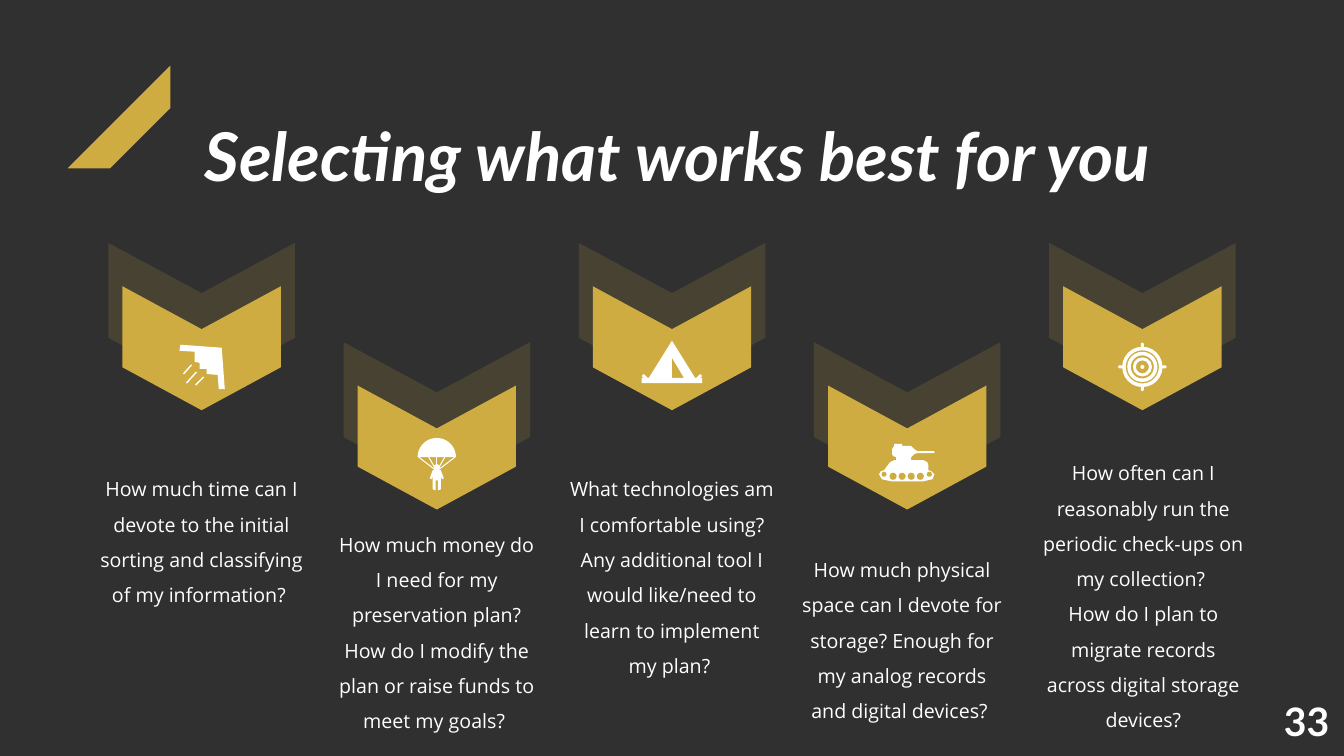
from math import cos, pi, sin

from lxml.etree import SubElement
from pptx import Presentation
from pptx.dml.color import RGBColor
from pptx.enum.shapes import MSO_CONNECTOR, MSO_SHAPE
from pptx.enum.text import MSO_ANCHOR, PP_ALIGN
from pptx.oxml.ns import qn
from pptx.util import Inches, Pt

DARK = RGBColor(0x30, 0x30, 0x30)
GOLD = RGBColor(0xCE, 0xAC, 0x41)
WHITE = RGBColor(0xFF, 0xFF, 0xFF)

# Five columns, alternating between an upper and a lower row
WIDTH, HEIGHT = 13.33, 7.5
FIRST_COLUMN, COLUMN = 0.15 * WIDTH, 0.175 * WIDTH
UPPER_ROW, ROW_STEP = 3.13, 0.985
BADGE_DROP, ICON_DROP = 0.325, 0.51
TEXT_WIDTH = 2.23

# Question paragraphs, text top, text height, sideways shift of the text
QUESTIONS = [
    (["How much time can I devote to the initial sorting and classifying of my information? "],
     4.57, 1.48, 0),
    (["How much money do I need for my preservation plan? How do I modify the plan or raise "
      "funds to meet my goals? "], 5.12, 2.18, 0),
    (["What technologies am I comfortable using? Any additional tool I would like/need to "
      "learn to implement my plan? "], 4.57, 2.18, 0),
    (["How much physical space can I devote for storage? Enough for my analog records and "
      "digital devices? "], 5.37, 1.83, -0.05),
    (["How often can I reasonably run the periodic check-ups on my collection? ",
      "How do I plan to migrate records across digital storage devices?"], 4.41, 2.89, 0.01),
]

# Icon outlines, in hundredths of an inch from the icon's centre
PLANE = [(20, -19), (-21, -22), (-22, -16), (-7, -15), (-7, -5), (-2, -4), (-2, 2),
         (5, 2), (5, 7), (16, 8), (17, 22), (23, 22)]
BOMBS = [((-15, 16), (-5, 5)), ((-6, 18), (2, 10)), ((-18, 7), (-10, -2))]
JUMPER = [(7, 12), (4, 4), (-4, 4), (-7, 12), (-5, 13), (-4, 9), (-4, 23), (-1, 24),
          (-1, 14), (1, 14), (1, 24), (4, 23), (4, 9), (5, 13)]
TENT = [(-24, 11), (-28, 7), (-30, 9), (-28, 11), (-30, 11), (-30, 16), (30, 16), (30, 11),
        (28, 11), (30, 9), (28, 7), (24, 11), (23, 11), (0, -26), (-23, 11)]
TENT_DOOR = [(0, 11), (0, -9), (12, 11)]
TANK = [(-23, 4), (-17, -4), (-13, -6), (-11, -6), (-11, -9), (-14, -10), (-15, -12),
        (-15, -17), (-13, -20), (-13, -22), (-5, -22), (-5, -20), (4, -20), (7, -17),
        (10, -15), (27, -15), (27, -13), (10, -13), (7, -12), (4, -9), (4, -6), (16, -6),
        (20, -4), (21, -1), (21, 4), (24, 5), (27, 8), (25, 13), (16, 15), (-16, 15),
        (-25, 13), (-28, 8), (-26, 5)]


def paint(shape, color, alpha=None):
    shape.shadow.inherit = False
    shape.line.fill.background()
    shape.fill.solid()
    shape.fill.fore_color.rgb = color
    if alpha is not None:
        color_element = shape.fill._xPr.find(".//" + qn("a:srgbClr"))
        SubElement(color_element, qn("a:alpha")).set("val", str(alpha * 1000))


def add_centered(slide, kind, x, y, width, height, color=WHITE, alpha=None, adjustment=None,
                 rotation=0):
    shape = slide.shapes.add_shape(kind, Inches(x - width / 2), Inches(y - height / 2),
                                   Inches(width), Inches(height))
    shape.rotation = rotation
    if adjustment is not None:
        shape.adjustments[0] = adjustment
    paint(shape, color, alpha)


def add_circle(slide, x, y, radius, color=WHITE):
    add_centered(slide, MSO_SHAPE.OVAL, x, y, 2 * radius, 2 * radius, color)


def add_outline(slide, x, y, *contours):
    placed = [[(Inches(x + dx / 100), Inches(y + dy / 100)) for dx, dy in contour]
              for contour in contours]
    builder = slide.shapes.build_freeform(*placed[0][0], scale=1.0)
    for index, points in enumerate(placed):
        if index:
            builder.move_to(*points[0])
        builder.add_line_segments(points[1:], close=True)
    paint(builder.convert_to_shape(), WHITE)


def add_stroke(slide, x, y, start, end, weight):
    line = slide.shapes.add_connector(
        MSO_CONNECTOR.STRAIGHT, Inches(x + start[0] / 100), Inches(y + start[1] / 100),
        Inches(x + end[0] / 100), Inches(y + end[1] / 100))
    line.line.color.rgb = WHITE
    line.line.width = Pt(weight)
    SubElement(line._element.spPr, qn("a:effectLst"))


def add_text(slide, box, paragraphs, font, size, align=PP_ALIGN.CENTER, spacing=1.0,
             anchor=MSO_ANCHOR.TOP, bold=False, italic=False):
    frame = slide.shapes.add_textbox(*(Inches(length) for length in box)).text_frame
    frame.word_wrap = True
    frame.vertical_anchor = anchor
    for index, text in enumerate(paragraphs):
        paragraph = frame.add_paragraph() if index else frame.paragraphs[0]
        paragraph.alignment = align
        paragraph.line_spacing = spacing
        run = paragraph.add_run()
        run.text = text
        run.font.name, run.font.size = font, Pt(size)
        run.font.bold, run.font.italic = bold, italic
        run.font.color.rgb = WHITE
    return frame


def draw_plane(slide, x, y):
    add_outline(slide, x, y, PLANE)
    for start, end in BOMBS:
        add_stroke(slide, x, y, start, end, 1)


def draw_parachute(slide, x, y):
    canopy = [(19 * cos(pi * step / 24), -9 - 19 * sin(pi * step / 24)) for step in range(25)]
    add_outline(slide, x, y, canopy)
    for cord in (-18, -8, 0, 8, 18):
        add_stroke(slide, x, y, (cord, -9), (cord / 18, 4), 0.75)
    add_circle(slide, x, y + 0.01, 0.03)
    add_outline(slide, x, y, JUMPER)


def draw_tent(slide, x, y):
    add_outline(slide, x, y, TENT, TENT_DOOR)


def draw_tank(slide, x, y):
    add_outline(slide, x, y, TANK)
    for wheel in range(6):
        outer = wheel in (0, 5)
        add_circle(slide, x - 0.23 + 0.09 * wheel, y + (0.08 if outer else 0.1),
                   0.025 if outer else 0.035, GOLD)


def draw_target(slide, x, y):
    for radius, thickness in ((0.2, 0.035), (0.15, 0.035), (0.095, 0.03)):
        add_centered(slide, MSO_SHAPE.DONUT, x, y, 2 * radius, 2 * radius,
                     adjustment=thickness / (2 * radius))
    add_circle(slide, x, y, 0.02)
    for dx, dy in ((0, -1), (1, 0), (0, 1), (-1, 0)):
        add_centered(slide, MSO_SHAPE.ROUNDED_RECTANGLE, x + 0.21 * dx, y + 0.21 * dy,
                     0.06 if dx else 0.03, 0.06 if dy else 0.03, adjustment=0.5)


def add_badge(slide, x, y):
    for drop, length, width, alpha in ((0, 1.44, 1.85, 15), (BADGE_DROP, 1.23, 1.57, None)):
        add_centered(slide, MSO_SHAPE.CHEVRON, x, y + drop, length, width, GOLD, alpha,
                     adjustment=0.346, rotation=90)


def main():
    presentation = Presentation()
    presentation.slide_width, presentation.slide_height = Inches(WIDTH), Inches(HEIGHT)
    slide = presentation.slides.add_slide(presentation.slide_layouts[6])
    slide.background.fill.solid()
    slide.background.fill.fore_color.rgb = DARK

    # Corner stripe, page number and title
    add_centered(slide, MSO_SHAPE.DIAGONAL_STRIPE, 1.18, 1.16, 1.02, 1.02, GOLD,
                 adjustment=0.588, rotation=180)
    add_text(slide, (12.44, 6.87, 1.04, 0.57), ["33"], "Lato", 28,
             anchor=MSO_ANCHOR.MIDDLE, bold=True)
    title = add_text(slide, (1.93, 0.69, 10.51, 1.7), ["Selecting what works best for you"],
                     "Lato", 48, PP_ALIGN.LEFT, 0.9, MSO_ANCHOR.MIDDLE, True, True)
    title.margin_top, title.margin_bottom = Inches(0.16), Inches(0.08)

    # Badge, icon and questions of each column
    icons = [draw_plane, draw_parachute, draw_tent, draw_tank, draw_target]
    for index, (draw_icon, question) in enumerate(zip(icons, QUESTIONS)):
        paragraphs, top, height, shift = question
        x = FIRST_COLUMN + index * COLUMN
        y = UPPER_ROW + index % 2 * ROW_STEP
        add_badge(slide, x, y)
        draw_icon(slide, x, y + ICON_DROP)
        add_text(slide, (x + shift - TEXT_WIDTH / 2, top, TEXT_WIDTH, height), paragraphs,
                 "Open Sans", 14, spacing=1.5)

    presentation.save("out.pptx")


if __name__ == "__main__":
    main()
